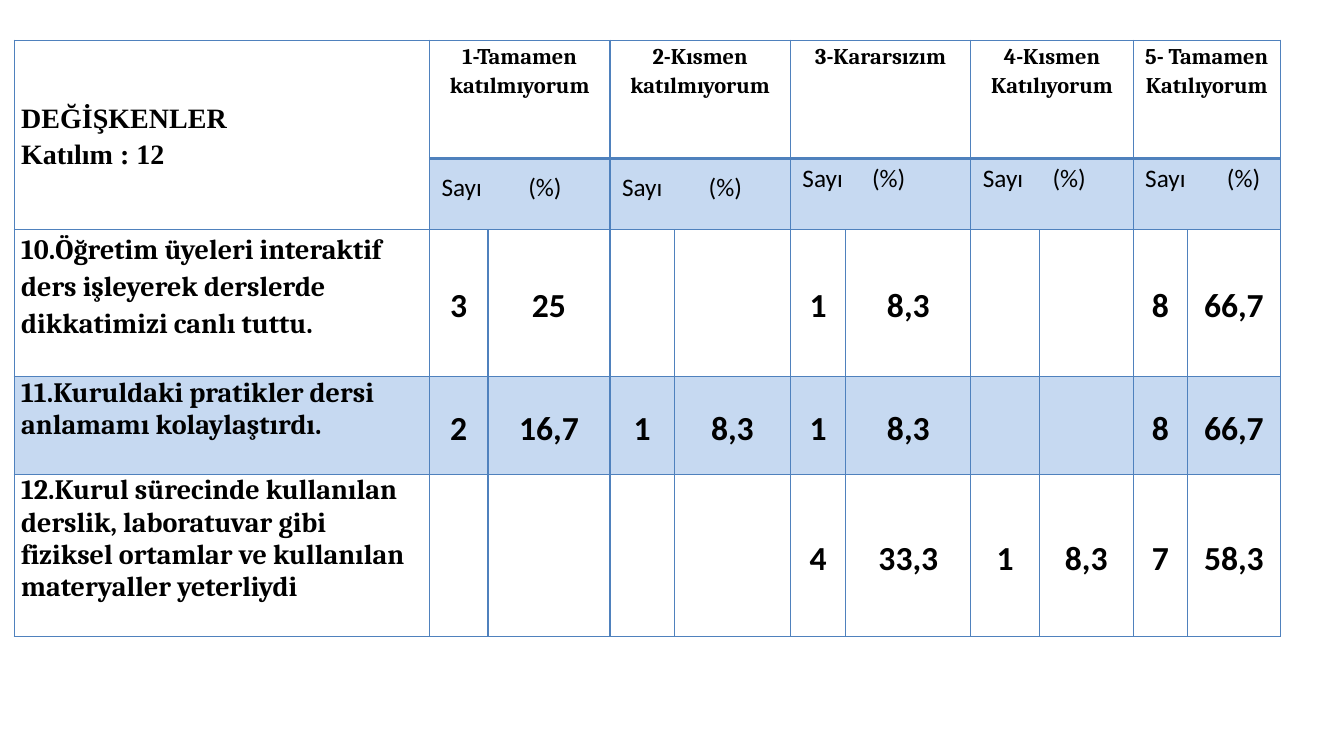
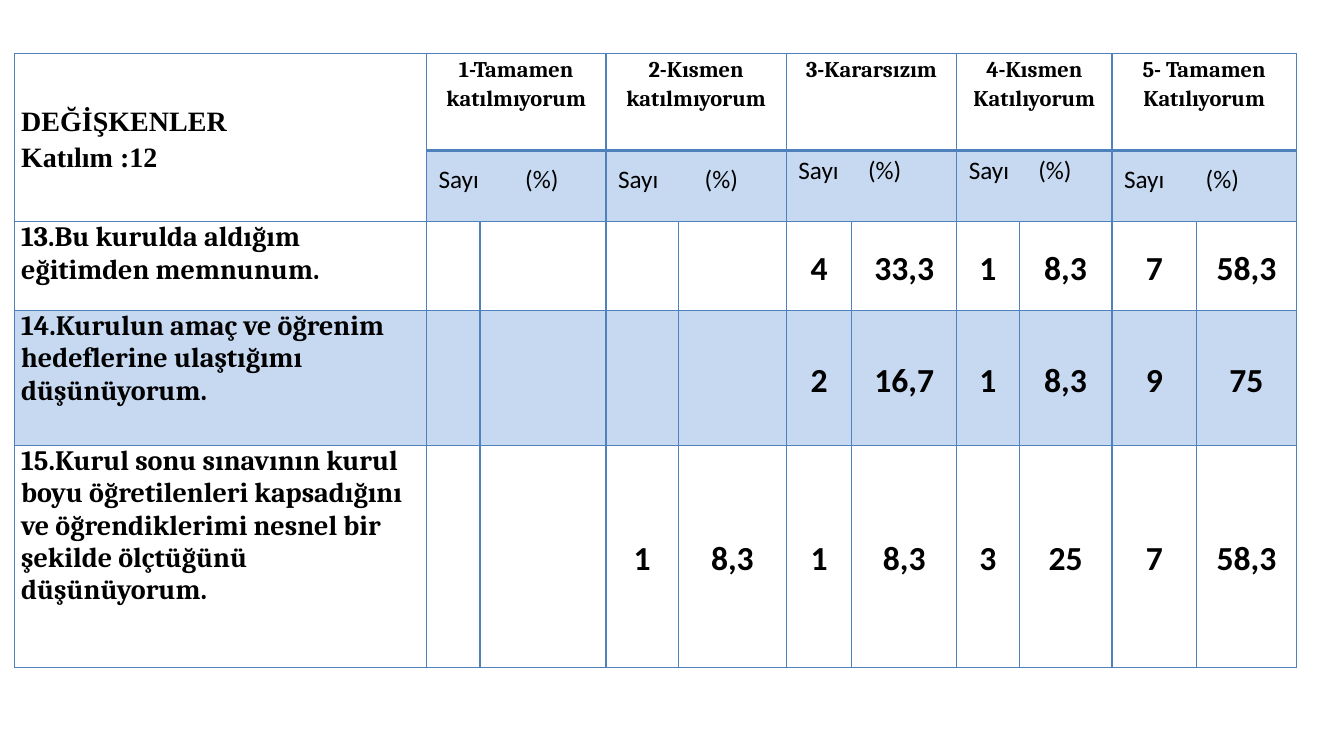
from dataclasses import dataclass

from lxml import etree
from pptx import Presentation
from pptx.dml.color import RGBColor
from pptx.enum.text import MSO_ANCHOR, PP_ALIGN
from pptx.oxml.ns import qn
from pptx.util import Inches, Pt

TOP, MIDDLE = MSO_ANCHOR.TOP, MSO_ANCHOR.MIDDLE
LEFT, CENTER = PP_ALIGN.LEFT, PP_ALIGN.CENTER

COLORS = {"text": "000000", "border": "4F81BD", "band": "C6D9F1", "plain": "FFFFFF"}
THIN, THICK = 1, 2.25
TABLE_LEFT = 0.14
SUBHEAD_HEIGHT = 0.7
SUBHEAD_INDENT = 0.12
RAISED_MARGIN = 0.18
BLANK_LAYOUT = 6


@dataclass(frozen=True)
class TextStyle:
    font: dict
    paragraph: dict
    anchor: int = TOP


@dataclass(frozen=True)
class Answer:
    heading: str
    percent_tab: float


@dataclass(frozen=True)
class Question:
    text: str
    height: float
    results: tuple
    line_spacing: float = 1.0


@dataclass(frozen=True)
class Survey:
    top: float
    participation: str
    column_widths: tuple
    heading_height: float
    raised_answers: tuple
    questions: tuple


VARIABLES = TextStyle(
    {"name": "Times New Roman", "size": Pt(20), "bold": True},
    {"alignment": LEFT, "line_spacing": 1.15}, MIDDLE)
HEADING = TextStyle(
    {"name": "Cambria", "size": Pt(16), "bold": True},
    {"alignment": CENTER, "line_spacing": 1.15})
SUBHEAD = TextStyle(
    {"name": "Calibri", "size": Pt(18), "bold": False},
    {"alignment": LEFT, "line_spacing": Pt(13)}, MIDDLE)
RESULT = TextStyle(
    {"name": "Calibri", "size": Pt(24), "bold": True},
    {"alignment": CENTER, "line_spacing": 1.15}, MIDDLE)
QUESTION_FONT = {"name": "Cambria", "size": Pt(20), "bold": True}

ANSWERS = (
    Answer("1-Tamamen katılmıyorum", 0.86),
    Answer("2-Kısmen katılmıyorum", 0.86),
    Answer("3-Kararsızım", 0.69),
    Answer("4-Kısmen Katılıyorum", 0.69),
    Answer("5- Tamamen Katılıyorum", 0.81),
)

SURVEYS = (
    Survey(
        0.4, "Katılım : 12",
        (4.12, 0.58, 1.21, 0.64, 1.15, 0.55, 1.24, 0.68, 0.93, 0.54, 0.92),
        1.17, (2, 3, 4),
        (
            Question("10.Öğretim üyeleri interaktif ders işleyerek derslerde "
                     "dikkatimizi canlı tuttu.", 1.46,
                     ("3", "25", "", "", "1", "8,3", "", "", "8", "66,7"), 1.15),
            Question("11.Kuruldaki pratikler dersi anlamamı kolaylaştırdı.", 0.97,
                     ("2", "16,7", "1", "8,3", "1", "8,3", "", "", "8", "66,7")),
            Question("12.Kurul sürecinde kullanılan derslik, laboratuvar gibi "
                     "fiziksel ortamlar ve kullanılan materyaller yeterliydi", 1.61,
                     ("", "", "", "", "4", "33,3", "1", "8,3", "7", "58,3")),
        )),
    Survey(
        0.53, "Katılım :12",
        (4.09, 0.53, 1.25, 0.72, 1.07, 0.65, 1.04, 0.62, 0.92, 0.84, 0.99),
        0.96, (2, 3),
        (
            Question("13.Bu kurulda aldığım eğitimden memnunum.", 0.88,
                     ("", "", "", "", "4", "33,3", "1", "8,3", "7", "58,3")),
            Question("14.Kurulun amaç ve öğrenim hedeflerine ulaştığımı "
                     "düşünüyorum.", 1.34,
                     ("", "", "", "", "2", "16,7", "1", "8,3", "9", "75")),
            Question("15.Kurul sonu sınavının kurul boyu öğretilenleri kapsadığını "
                     "ve öğrendiklerimi nesnel bir şekilde ölçtüğünü düşünüyorum.", 2.2,
                     ("", "", "1", "8,3", "1", "8,3", "3", "25", "7", "58,3")),
        )),
)


def apply_format(target, values: dict) -> None:
    for name, value in values.items():
        setattr(target, name, value)


def write_cell(cell, lines: tuple, style: TextStyle) -> None:
    apply_format(cell, {
        "vertical_anchor": style.anchor,
        "margin_left": Inches(0.07), "margin_right": Inches(0.07),
        "margin_top": 0, "margin_bottom": 0})
    cell.text_frame.text = "\n".join(lines)
    for paragraph in cell.text_frame.paragraphs:
        apply_format(paragraph, style.paragraph)
        for run in paragraph.runs:
            apply_format(run.font, style.font)
            run.font.color.rgb = RGBColor.from_string(COLORS["text"])


def add_tab_stop(paragraph, position: float) -> None:
    properties = paragraph._p.get_or_add_pPr()
    tabs = etree.SubElement(properties, qn("a:tabLst"))
    etree.SubElement(tabs, qn("a:tab"), pos=str(Inches(position)), algn="l")


def frame_cell(cell, color: str, top: float, bottom: float) -> None:
    """Draw the four borders of a cell, then its fill."""
    properties = cell._tc.get_or_add_tcPr()
    for side, width in (("L", THIN), ("R", THIN), ("T", top), ("B", bottom)):
        line = etree.SubElement(properties, qn(f"a:ln{side}"), w=str(Pt(width)))
        fill = etree.SubElement(line, qn("a:solidFill"))
        etree.SubElement(fill, qn("a:srgbClr"), val=COLORS["border"])
    cell.fill.solid()
    cell.fill.fore_color.rgb = RGBColor.from_string(COLORS[color])


def frame_table(table) -> None:
    for row_index, row in enumerate(table.rows):
        for column_index, cell in enumerate(row.cells):
            is_answer = column_index > 0
            banded = row_index == 3 or (row_index == 1 and is_answer)
            frame_cell(
                cell, "band" if banded else "plain",
                THICK if row_index == 1 and is_answer else THIN,
                THICK if row_index == 0 and is_answer else THIN)


def write_header(table, survey: Survey) -> None:
    corner = table.cell(0, 0)
    corner.merge(table.cell(1, 0))
    write_cell(corner, ("DEĞİŞKENLER", survey.participation), VARIABLES)
    for index, answer in enumerate(ANSWERS):
        column = 1 + 2 * index
        heading, subhead = table.cell(0, column), table.cell(1, column)
        for row, cell in enumerate((heading, subhead)):
            cell.merge(table.cell(row, column + 1))
        write_cell(heading, (answer.heading,), HEADING)
        write_cell(subhead, ("Sayı\t(%)",), SUBHEAD)
        subhead.margin_left = Inches(SUBHEAD_INDENT)
        if index in survey.raised_answers:
            subhead.margin_bottom = Inches(RAISED_MARGIN)
        add_tab_stop(subhead.text_frame.paragraphs[0], answer.percent_tab)


def write_questions(table, questions: tuple) -> None:
    for row, question in enumerate(questions, start=2):
        style = TextStyle(
            QUESTION_FONT,
            {"alignment": LEFT, "line_spacing": question.line_spacing})
        write_cell(table.cell(row, 0), (question.text,), style)
        for column, result in enumerate(question.results, start=1):
            if result:
                write_cell(table.cell(row, column), (result,), RESULT)


def add_survey_slide(presentation, survey: Survey) -> None:
    slide = presentation.slides.add_slide(presentation.slide_layouts[BLANK_LAYOUT])
    heights = (survey.heading_height, SUBHEAD_HEIGHT,
               *(question.height for question in survey.questions))
    widths = survey.column_widths
    table = slide.shapes.add_table(
        len(heights), len(widths), Inches(TABLE_LEFT), Inches(survey.top),
        Inches(sum(widths)), Inches(sum(heights))).table
    apply_format(table, {"first_row": False, "horz_banding": False})
    for column, width in zip(table.columns, widths):
        column.width = Inches(width)
    for row, height in zip(table.rows, heights):
        row.height = Inches(height)
    write_header(table, survey)
    write_questions(table, survey.questions)
    frame_table(table)


def main() -> None:
    presentation = Presentation()
    apply_format(presentation, {"slide_width": Inches(13.33), "slide_height": Inches(7.5)})
    for survey in SURVEYS:
        add_survey_slide(presentation, survey)
    presentation.save("out.pptx")


if __name__ == "__main__":
    main()
